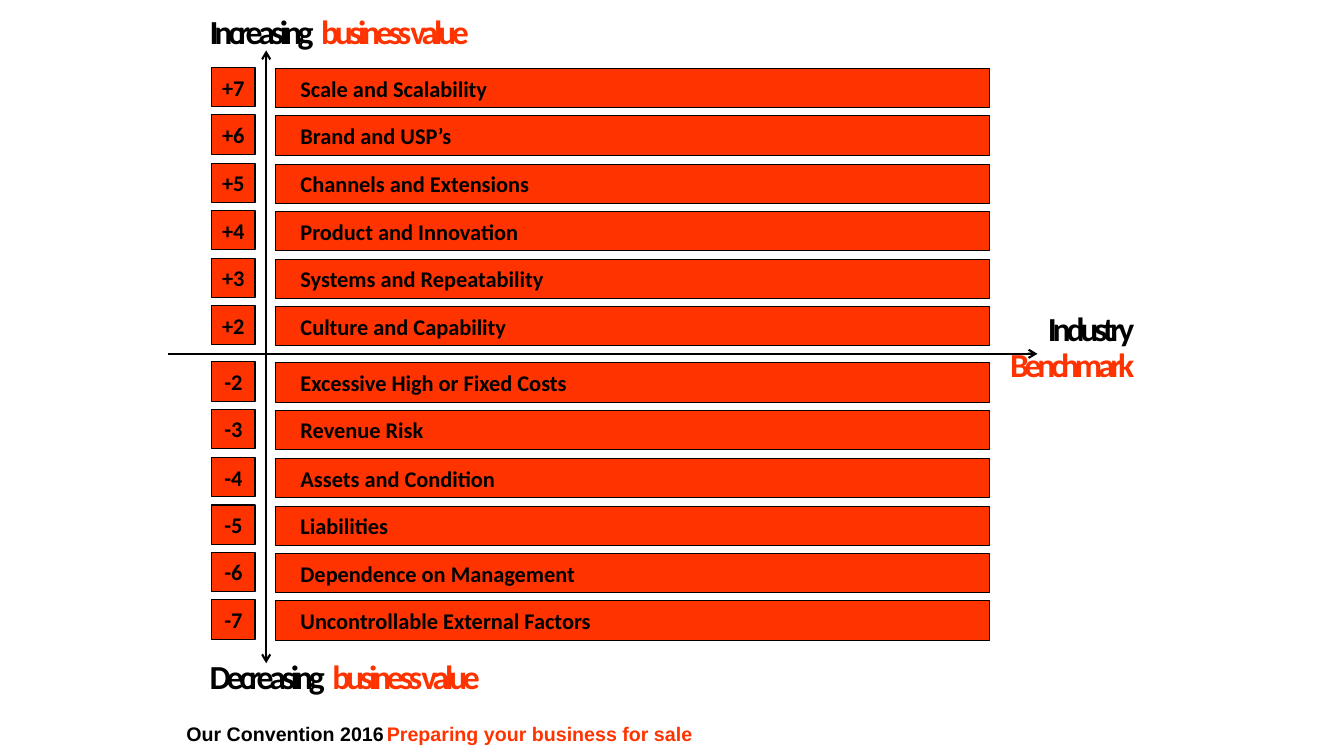
"""Build the business value scale slide."""
from lxml.etree import SubElement
from pptx import Presentation
from pptx.dml.color import RGBColor
from pptx.enum.shapes import MSO_CONNECTOR, MSO_SHAPE
from pptx.enum.text import MSO_ANCHOR, MSO_AUTO_SIZE, PP_ALIGN
from pptx.oxml.ns import qn
from pptx.util import Pt

PX = 9144
BLACK = "000000"
ORANGE = "FF3300"
ROW_PITCH = 47.3
ROW_HEIGHT = 39
GAINS = [
    ("+7", "Scale and Scalability"),
    ("+6", "Brand and USP’s"),
    ("+5", "Channels and Extensions"),
    ("+4", "Product and Innovation"),
    ("+3", "Systems and Repeatability"),
    ("+2", "Culture and Capability"),
]
LOSSES = [
    ("-2", "Excessive High or Fixed Costs"),
    ("-3", "Revenue Risk"),
    ("-4", "Assets and Condition"),
    ("-5", "Liabilities"),
    ("-6", "Dependence on Management"),
    ("-7", "Uncontrollable External Factors"),
]


def color(value):
    """Turn a hex string into a colour."""
    return RGBColor.from_string(value)


def place(box, left, top, width, height):
    """Move and size a box in px."""
    box.left, box.top = left * PX, top * PX
    box.width, box.height = width * PX, height * PX


def set_frame(box, align, anchor=MSO_ANCHOR.MIDDLE, inset=10):
    """Format the text frame of a box and return its paragraph."""
    frame = box.text_frame
    frame.word_wrap = True
    frame.auto_size = MSO_AUTO_SIZE.NONE
    frame.vertical_anchor = anchor
    frame.margin_left, frame.margin_right = inset * PX, 10 * PX
    frame.margin_top = frame.margin_bottom = 5 * PX
    para = frame.paragraphs[0]
    para.alignment = align
    para.space_before = Pt(0)
    return para


def add_span(para, text, size, fill=BLACK, font="Calibri", spacing=0):
    """Add one bold run, with letter spacing in hundredths of a point."""
    span = para.add_run()
    span.text = text
    span.font.size = Pt(size)
    span.font.bold = True
    span.font.name = font
    span.font.color.rgb = color(fill)
    if spacing:
        span.font._element.set("spc", str(spacing))


def add_box(page, left, top, width, text, align, inset=10):
    """Add an orange box of one row's height with its label."""
    box = page.shapes.add_shape(
        MSO_SHAPE.RECTANGLE, left * PX, top * PX, width * PX, ROW_HEIGHT * PX)
    box.shadow.inherit = False
    box.fill.solid()
    box.fill.fore_color.rgb = color(ORANGE)
    box.line.color.rgb = color(BLACK)
    box.line.width = Pt(0.75)
    add_span(set_frame(box, align, inset=inset), text, 16)


def add_rows(page, rows, first_top):
    """Add score boxes and factor bars at an equal pitch."""
    for index, (score, factor) in enumerate(rows):
        top = first_top + round(index * ROW_PITCH)
        add_box(page, 210, top, 43, score, PP_ALIGN.CENTER)
        add_box(page, 273, top + 1, 708, factor, PP_ALIGN.LEFT, 25)


def add_axis(page, start, end, ends):
    """Add an axis line with open arrowheads at the named ends."""
    axis = page.shapes.add_connector(
        MSO_CONNECTOR.STRAIGHT, *[value * PX for value in start + end])
    axis.line.color.rgb = color(BLACK)
    axis.line.width = Pt(1.5)
    outline = axis.line._get_or_add_ln()
    for name in ends:
        SubElement(outline, qn(f"a:{name}")).set("type", "arrow")
    SubElement(axis._element.spPr, qn("a:effectLst"))


def add_direction(page, word, top):
    """Add the caption at one end of the value axis."""
    box = page.shapes.add_textbox(194 * PX, top * PX, 390 * PX, 39 * PX)
    para = set_frame(box, PP_ALIGN.LEFT, inset=14)
    add_span(para, word, 24, spacing=-300)
    add_span(para, " ", 24, spacing=-60)
    add_span(para, "business value", 24, ORANGE, spacing=-300)


def set_title(page):
    """Fill the title that names the horizontal axis."""
    title = page.shapes.title
    place(title, 988, 313, 147, 74)
    para = set_frame(title, PP_ALIGN.RIGHT, MSO_ANCHOR.BOTTOM)
    para.line_spacing = 0.9
    add_span(para, "Industry", 24, spacing=-300)
    para.add_line_break()
    add_span(para, "Benchmark", 24, ORANGE, spacing=-300)


def add_footer(page):
    """Add the event line at the bottom."""
    box = page.shapes.add_textbox(175 * PX, 711 * PX, 815 * PX, 34 * PX)
    para = set_frame(box, PP_ALIGN.LEFT)
    add_span(para, "Our Convention 2016", 14, font="Arial")
    add_span(para, " ", 7, font="Arial")
    add_span(para, "Preparing your business for sale", 14, ORANGE, "Arial")


def main():
    """Build and save the deck."""
    deck = Presentation()
    deck.slide_width, deck.slide_height = 1333 * PX, 750 * PX
    page = deck.slides.add_slide(deck.slide_layouts.get_by_name("Title Only"))
    set_title(page)
    add_footer(page)
    add_axis(page, (167, 351), (1029, 351), ["tailEnd"])
    add_rows(page, GAINS, 67)
    add_rows(page, LOSSES, 359)
    add_axis(page, (264, 50), (264, 658), ["headEnd", "tailEnd"])
    add_direction(page, "Increasing", 11)
    add_direction(page, "Decreasing", 651)
    deck.save("out.pptx")


if __name__ == "__main__":
    main()
